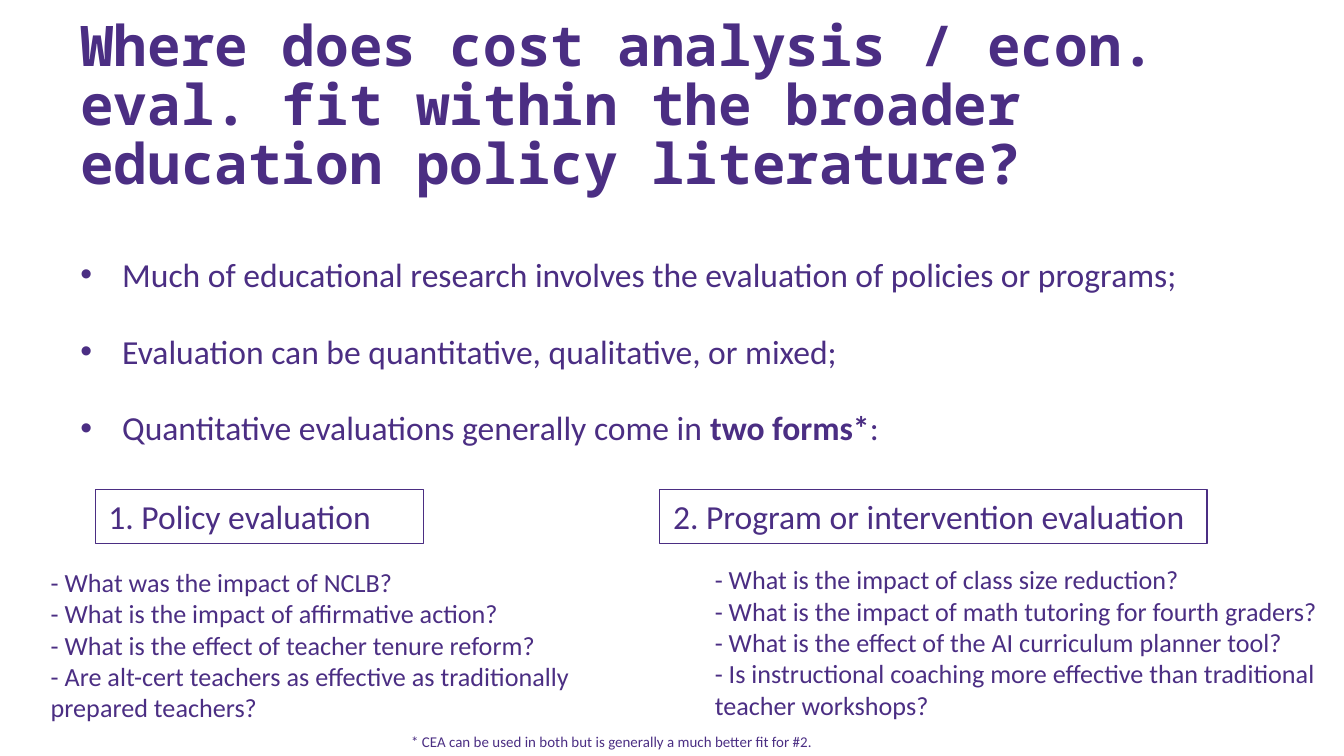
from pptx import Presentation
from pptx.dml.color import RGBColor
from pptx.enum.shapes import MSO_SHAPE as Shape
from pptx.enum.text import MSO_ANCHOR as Anchor, PP_ALIGN as Align
from pptx.oxml.xmlchemy import OxmlElement
from pptx.util import Cm, Pt

COLORS = {"purple": "4B2E83", "white": "FFFFFF"}
BULLET_INDENT = Cm(0.79)

TITLE = ("Where does cost analysis / econ. eval. fit within "
         "the broader education policy literature?")
# Each bullet is a list of (text, bold) runs
BULLETS = [
    [("Much of educational research involves the evaluation of policies or programs;", False)],
    [("Evaluation can be quantitative, qualitative, or mixed;", False)],
    [("Quantitative evaluations generally come in ", False), ("two forms*", True), (":", False)],
]
POLICY_QUESTIONS = [
    "- What was the impact of NCLB?",
    "- What is the impact of affirmative action?",
    "- What is the effect of teacher tenure reform?",
    "- Are alt-cert teachers as effective as traditionally prepared teachers?",
]
PROGRAM_QUESTIONS = [
    "- What is the impact of class size reduction?",
    "- What is the impact of math tutoring for fourth graders?",
    "- What is the effect of the AI curriculum planner tool?",
    "- Is instructional coaching more effective than traditional teacher workshops?",
]
FOOTNOTE = "* CEA can be used in both but is generally a much better fit for #2."


def color(name):
    return RGBColor.from_string(COLORS[name])


def add_bullet(paragraph):
    properties = paragraph._p.get_or_add_pPr()
    properties.set("marL", str(BULLET_INDENT))
    properties.set("indent", str(-BULLET_INDENT))
    font = OxmlElement("a:buFont")
    font.set("typeface", "Arial")
    character = OxmlElement("a:buChar")
    character.set("char", "•")
    properties.extend([font, character])


def write_text(shape, paragraphs, size=18, font="Calibri", bold=False,
               bullet=False, anchor=Anchor.TOP, line_spacing=None):
    """Fill a shape with paragraphs, each a string or a list of (text, bold) runs."""
    frame = shape.text_frame
    frame.word_wrap = True
    frame.vertical_anchor = anchor
    for index, content in enumerate(paragraphs):
        paragraph = frame.add_paragraph() if index else frame.paragraphs[0]
        paragraph.alignment = Align.LEFT
        if line_spacing:
            paragraph.line_spacing = line_spacing
        if bullet:
            add_bullet(paragraph)
        runs = [(content, bold)] if isinstance(content, str) else content
        for text, run_bold in runs:
            run = paragraph.add_run()
            run.text = text
            run.font.name = font
            run.font.size = Pt(size)
            run.font.bold = run_bold
            run.font.color.rgb = color("purple")


def add_text(slide, left, top, width, height, paragraphs, **text_format):
    box = slide.shapes.add_textbox(Cm(left), Cm(top), Cm(width), Cm(height))
    write_text(box, paragraphs, **text_format)
    return box


def add_panel(slide, left, top, width, height, paragraphs, fill=None, line=None, **text_format):
    panel = slide.shapes.add_shape(Shape.RECTANGLE, Cm(left), Cm(top), Cm(width), Cm(height))
    panel.shadow.inherit = False
    if fill:
        panel.fill.solid()
        panel.fill.fore_color.rgb = color(fill)
    else:
        panel.fill.background()
    if line:
        panel.line.color.rgb = color(line)
        panel.line.width = Pt(0.75)
    else:
        panel.line.fill.background()
    write_text(panel, paragraphs, **text_format)


def main():
    presentation = Presentation()
    presentation.slide_width, presentation.slide_height = Cm(25.4), Cm(14.28)
    slide = presentation.slides.add_slide(presentation.slide_layouts[6])

    # Title
    title = add_text(slide, 1.27, 1.02, 23.5, 2.69, [TITLE], size=30, bold=True,
                     font="Noto Sans Mono", anchor=Anchor.BOTTOM, line_spacing=0.88)
    title.text_frame.margin_bottom = 0

    # Evenly spaced bullets
    for row, runs in enumerate(BULLETS):
        add_text(slide, 1.27, 4.67 + row * 1.45, 22.58, 1.02, [runs], bullet=True)

    # Headings of the two forms
    for left, width, heading in ((12.47, 10.34, "2. Program or intervention evaluation"),
                                 (1.8, 6.2, "1. Policy evaluation")):
        add_panel(slide, left, 9.25, width, 1.02, [heading], line="purple")

    # Example questions
    add_text(slide, 0.71, 10.57, 11.43, 3.25, POLICY_QUESTIONS, size=14)
    add_panel(slide, 13.26, 10.52, 12.14, 3.25, PROGRAM_QUESTIONS, fill="white", size=14)

    # Footnote
    add_panel(slide, 7.52, 13.72, 9.25, 0.6, [FOOTNOTE], fill="white", size=8)

    presentation.save("out.pptx")


if __name__ == "__main__":
    main()
